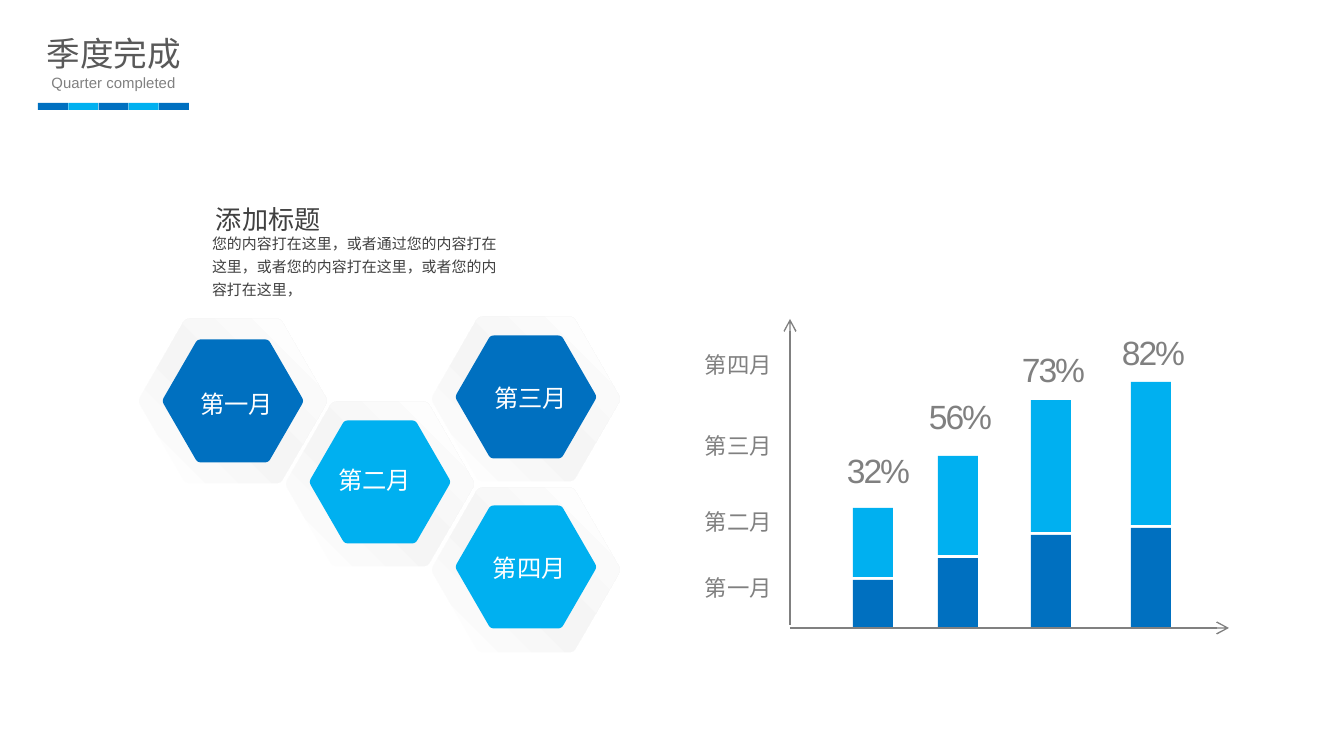
"""Build the quarterly completion slide with month hexagons and stacked bars."""
from copy import deepcopy
from dataclasses import dataclass
from math import cos, pi, sin

from pptx import Presentation
from pptx.dml.color import RGBColor
from pptx.enum.shapes import MSO_CONNECTOR, MSO_SHAPE
from pptx.enum.text import PP_ALIGN
from pptx.oxml.ns import qn
from pptx.oxml.xmlchemy import OxmlElement
from pptx.util import Pt

PX = 914400 / 134.4
RECT, LINE = MSO_SHAPE.RECTANGLE, MSO_CONNECTOR.STRAIGHT
LEFT, MID = PP_ALIGN.LEFT, PP_ALIGN.CENTER

WHITE = RGBColor(0xFF, 0xFF, 0xFF)
PALE = RGBColor(0xF5, 0xF5, 0xF5)
BLUE = RGBColor(0x00, 0x70, 0xC0)
SKY = RGBColor(0x00, 0xB0, 0xF0)
GREY = RGBColor(0x80, 0x80, 0x80)
DARK = RGBColor(0x40, 0x40, 0x40)
SLATE = RGBColor(0x59, 0x59, 0x59)
SHEEN = ((0, WHITE), (0.47, PALE), (1, WHITE))


@dataclass
class Label:
    text: str
    x: int
    y: int
    w: int
    h: int
    size: int
    color: RGBColor
    align: PP_ALIGN = LEFT
    wrap: bool = True
    inset: tuple[int, int] = (13, 7)
    space: float = 1
    track: int = 0


@dataclass
class Month:
    text: str
    x: int
    y: int
    core: int
    color: RGBColor
    left: int
    top: int


@dataclass
class Bar:
    text: str
    x: int
    top: int
    split: int
    left: int
    head: int


MONTHS = (
    Month("第一月", 233, 401, 401, BLUE, 187, 382),
    Month("第二月", 380, 484, 482, SKY, 325, 458),
    Month("第三月", 526, 399, 397, BLUE, 481, 376),
    Month("第四月", 526, 570, 567, SKY, 480, 546),
)
BARS = (
    Bar("32%", 853, 508, 580, 836, 445),
    Bar("56%", 938, 456, 558, 918, 391),
    Bar("73%", 1031, 400, 535, 1011, 344),
    Bar("82%", 1131, 382, 528, 1111, 327),
)
TICKS = (("第四月", 344), ("第三月", 425), ("第二月", 501), ("第一月", 567))
BASE, GAP, WIDE = 628, 3, 40
HEADS = (
    Label("您的内容打在这里，或者通过您的内容打在这里，或者您的内容打在这里，"
          "或者您的内容打在这里，", 199, 222, 321, 85, 8, DARK, space=1.3),
    Label("添加标题", 203, 188, 140, 42, 14, DARK, inset=(13, 0), space=1.5),
    Label("季度完成", 36, 28, 156, 51, 18, SLATE, MID, False, (9, 5)),
    Label("Quarter completed", 14, 67, 199, 32, 8, GREY, MID),
)


def emu(px: float) -> int:
    """Turn px into EMU."""
    return round(px * PX)


def write(shapes, item: Label) -> None:
    """Draw one text box."""
    box = shapes.add_textbox(*map(emu, (item.x, item.y, item.w, item.h)))
    frame = box.text_frame
    frame.word_wrap = item.wrap
    frame.margin_left = frame.margin_right = emu(item.inset[0])
    frame.margin_top = frame.margin_bottom = emu(item.inset[1])
    para = frame.paragraphs[0]
    para.alignment = item.align
    para.line_spacing = item.space
    run = para.add_run()
    run.text = item.text
    font = para.font
    font.name, font.size = "Arial", Pt(item.size)
    font.color.rgb = item.color
    if item.track:
        run.font._element.set("spc", str(item.track))


def paint(shape, color: RGBColor) -> None:
    """Give a shape a flat fill without line or shadow."""
    shape.shadow.inherit = False
    shape.line.fill.background()
    shape.fill.solid()
    shape.fill.fore_color.rgb = color


def block(shapes, x: float, y: int, w: int, h: int, color: RGBColor) -> None:
    """Draw one plain rectangle."""
    paint(shapes.add_shape(RECT, *map(emu, (x, y, w, h))), color)


def hexa(shapes, x: int, y: int, size: int, color: RGBColor):
    """Draw a hexagon whose corners are rounded by quadratic curves."""
    tips = [(x + size * cos(k * pi / 3), y + size * sin(k * pi / 3))
            for k in range(6)]
    dots = []
    for k, tip in enumerate(tips):
        prev, nxt = tips[k - 1], tips[(k + 1) % 6]
        for t in (0, 0.25, 0.5, 0.75, 1):
            a, b = 0.05 * (1 - t) ** 2, 0.05 * t ** 2
            dots.append(tuple(emu(c + a * (p - c) + b * (n - c))
                              for p, c, n in zip(prev, tip, nxt)))
    path = shapes.build_freeform(*dots[0])
    path.add_line_segments(dots[1:])
    shape = path.convert_to_shape()
    paint(shape, color)
    return shape


def shine(shape) -> None:
    """Lay the pale diagonal gradient over a shape."""
    fill = shape.fill
    fill.gradient()
    fill.gradient_angle = 45
    stops = shape._element.spPr.find(".//" + qn("a:gsLst"))
    stops.append(deepcopy(stops[-1]))
    for stop, (place, color) in zip(fill.gradient_stops, SHEEN):
        stop.position = place
        stop.color.rgb = color


def arrow(shapes, x1: int, y1: int, x2: int, y2: int) -> None:
    """Draw one axis with an open arrowhead."""
    axis = shapes.add_connector(LINE, *map(emu, (x1, y1, x2, y2)))
    axis.line.color.rgb = GREY
    axis.line.width = Pt(0.75)
    tail = OxmlElement("a:tailEnd")
    tail.set("type", "arrow")
    axis.line._get_or_add_ln().append(tail)
    axis._element.spPr.append(OxmlElement("a:effectLst"))


def main() -> None:
    """Draw the slide and save it."""
    deck = Presentation()
    deck.slide_width, deck.slide_height = emu(1344), emu(756)
    shapes = deck.slides.add_slide(deck.slide_layouts[6]).shapes
    for bar in BARS:
        write(shapes, Label(bar.text, bar.left, bar.head, 98, 51, 18, GREY,
                            inset=(11, 5), track=-110))
        block(shapes, bar.x, bar.split, WIDE, BASE - bar.split, BLUE)
        block(shapes, bar.x, bar.top, WIDE, bar.split - GAP - bar.top, SKY)
    for month in MONTHS:
        hexa(shapes, month.x, month.y, 96, WHITE)
        shine(hexa(shapes, month.x, month.y, 95, WHITE))
        hexa(shapes, month.x, month.core, 71, month.color)
        write(shapes, Label(month.text, month.left, month.top, 117, 43, 13,
                            WHITE))
    arrow(shapes, 790, BASE, 1229, BASE)
    arrow(shapes, 790, 625, 790, 319)
    for text, y in TICKS:
        write(shapes, Label(text, 692, y, 98, 40, 12, GREY))
    for head in HEADS:
        write(shapes, head)
    for k in range(5):
        block(shapes, 38 + 30.25 * k, 103, 30, 7, SKY if k % 2 else BLUE)
    deck.save("out.pptx")


if __name__ == "__main__":
    main()
